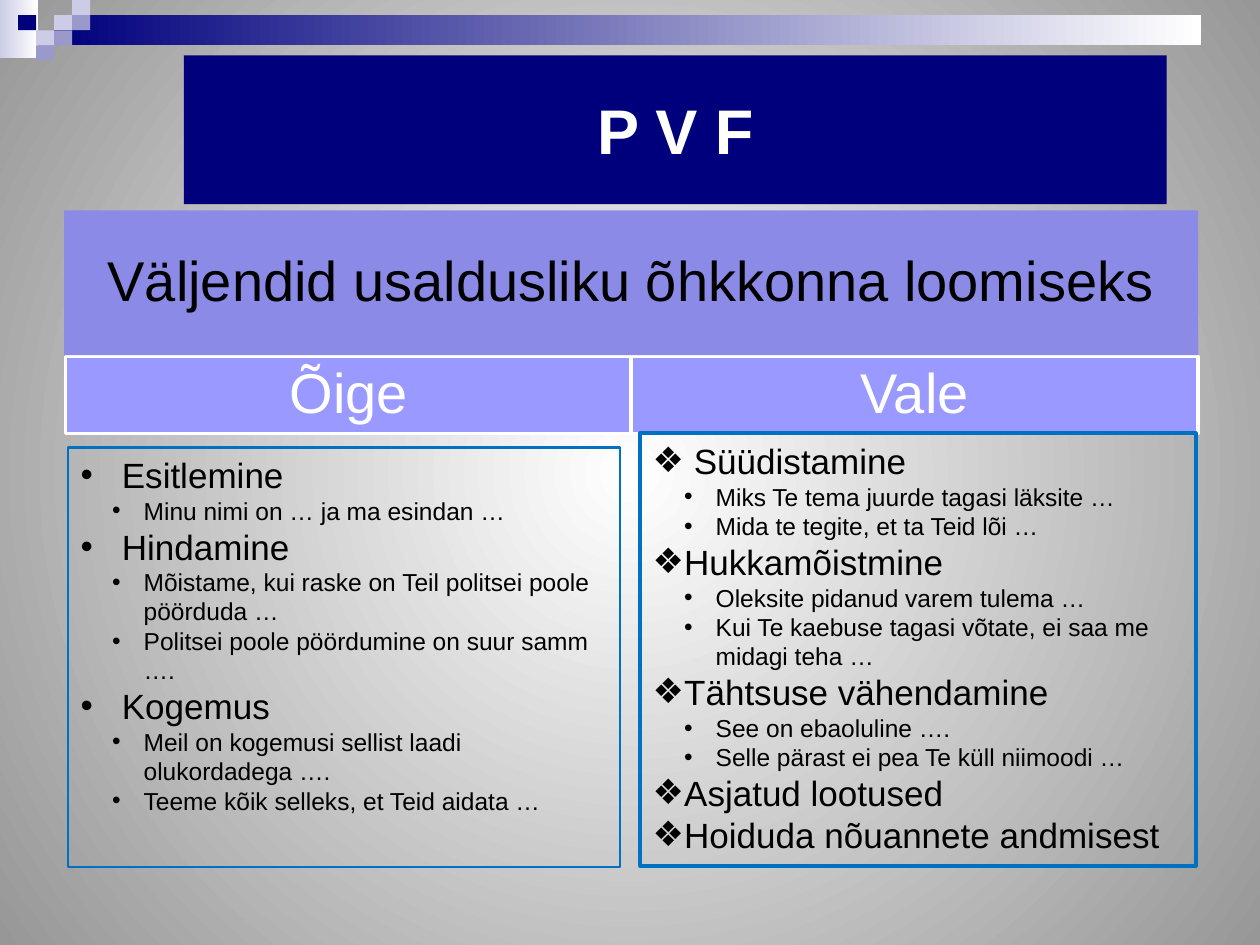
"""Build the PVF slide comparing right and wrong expressions."""
from lxml.etree import SubElement
from pptx import Presentation
from pptx.dml.color import RGBColor
from pptx.enum.shapes import MSO_SHAPE
from pptx.enum.text import MSO_ANCHOR as ANCHOR, MSO_AUTO_SIZE as FIT, PP_ALIGN as ALIGN
from pptx.oxml.ns import qn
from pptx.util import Inches, Pt

NAVY = RGBColor(0x00, 0x00, 0x7D)
PALE = RGBColor(0xCC, 0xCC, 0xE6)
LILAC = RGBColor(0x99, 0x99, 0xCC)
BAND = RGBColor(0x8B, 0x8B, 0xE7)
HEAD = RGBColor(0x99, 0x99, 0xFF)
EDGE = RGBColor(0x00, 0x70, 0xC0)
GREY = RGBColor(0x97, 0x97, 0x97)
WHITE = RGBColor(0xFF, 0xFF, 0xFF)
BLACK = RGBColor(0x00, 0x00, 0x00)

TITLE = "P V F"
TOPIC = "Väljendid usaldusliku õhkkonna loomiseks"
HEADS = ["Õige", "Vale"]
RIGHT = [
    (" Esitlemine", ["Minu nimi on … ja ma esindan …"]),
    (" Hindamine", ["Mõistame, kui raske on Teil politsei poole pöörduda …",
                    "Politsei poole pöördumine on suur samm …."]),
    (" Kogemus", ["Meil on kogemusi sellist laadi olukordadega ….",
                  "Teeme kõik selleks, et Teid aidata …"]),
]
WRONG = [
    (" Süüdistamine", ["Miks Te tema juurde tagasi läksite …",
                       "Mida te tegite, et ta Teid lõi …"]),
    ("Hukkamõistmine", ["Oleksite pidanud varem tulema …",
                        "Kui Te kaebuse tagasi võtate, ei saa me midagi teha …"]),
    ("Tähtsuse vähendamine", ["See on ebaoluline ….",
                              "Selle pärast ei pea Te küll niimoodi …"]),
    ("Asjatud lootused", []),
    ("Hoiduda nõuannete andmisest", []),
]
LISTS = [
    (RIGHT, "•", (0.54, 3.55, 4.38, 3.33), 1.5),
    (WRONG, "❖", (5.08, 3.44, 4.41, 3.43), 2.25),
]
BARS = [((0, 0, 0.3, 0.46), PALE, WHITE), ((0.43, 0.12, 9.1, 0.24), NAVY, WHITE)]
TILES = [(3, 1, PALE), (4, 0, PALE), (4, 1, LILAC), (2, 2, PALE),
         (1, 1, NAVY), (3, 2, LILAC), (2, 3, LILAC)]
TILE_W, TILE_H = 0.43 / 3, 0.12


def apply(item, **values):
    for name, value in values.items():
        setattr(item, name, value)


def place(shape, box):
    names = ("left", "top", "width", "height")
    apply(shape, **dict(zip(names, map(Inches, box))))


def paint(fill, color):
    fill.solid()
    fill.fore_color.rgb = color


def blend(fill, start, end):
    fill.gradient()
    for stop, color, spot in zip(fill.gradient_stops, (start, end), (0, 1)):
        stop.color.rgb = color
        stop.position = spot


def style(font, size, color, bold=False):
    apply(font, name="Arial", size=Pt(size), bold=bold)
    font.color.rgb = color


def add_box(slide, box, color):
    shape = slide.shapes.add_shape(MSO_SHAPE.RECTANGLE, *map(Inches, box))
    shape.shadow.inherit = False
    paint(shape.fill, color)
    shape.line.fill.background()
    return shape


def add_label(slide, box, fill, text, color):
    shape = add_box(slide, box, fill)
    frame = shape.text_frame
    edge = Inches(0.13)
    apply(frame, word_wrap=True, vertical_anchor=ANCHOR.MIDDLE, margin_left=edge,
          margin_top=edge, margin_right=edge, margin_bottom=edge)
    para = frame.paragraphs[0]
    apply(para, text=text, alignment=ALIGN.CENTER, line_spacing=0.9)
    style(para.font, 32, color)
    return shape


def fill_list(holder, groups, mark):
    frame = holder.text_frame
    apply(frame, word_wrap=True, auto_size=FIT.NONE, vertical_anchor=ANCHOR.TOP)
    rows = []
    for head, items in groups:
        rows.append((head, 0, mark, 20))
        rows += [(item, 1, "•", 14) for item in items]
    for i, (text, level, sign, size) in enumerate(rows):
        para = frame.add_paragraph() if i else frame.paragraphs[0]
        apply(para, text=text, level=level, space_before=Pt(0), alignment=ALIGN.LEFT)
        props = para._p.get_or_add_pPr()
        props.set("marL", str(Inches(0.25 * (level + 1))))
        props.set("indent", str(Inches(-0.25)))
        SubElement(props, qn("a:buFont")).set("typeface", "Arial")
        SubElement(props, qn("a:buChar")).set("char", sign)
        style(para.font, size, BLACK)


def set_back(slide):
    fill = slide.background.fill
    blend(fill, WHITE, GREY)
    grad = slide._element.find(".//" + qn("a:gradFill"))
    grad.remove(grad.find(qn("a:lin")))
    ring = SubElement(grad, qn("a:path"))
    ring.set("path", "circle")
    rect = SubElement(ring, qn("a:fillToRect"))
    for side in "ltrb":
        rect.set(side, "50000")


def main():
    deck = Presentation()
    apply(deck, slide_width=Inches(10), slide_height=Inches(7.5))
    slide = deck.slides.add_slide(deck.slide_layouts[3])
    title, *bodies = slide.placeholders
    set_back(slide)

    for box, start, end in BARS:
        bar = add_box(slide, box, start)
        blend(bar.fill, start, end)
        bar.fill.gradient_angle = 0
    for col, row, color in TILES:
        add_box(slide, (col * TILE_W, row * TILE_H, TILE_W, TILE_H), color)

    place(title, (1.46, 0.44, 7.8, 1.18))
    paint(title.fill, NAVY)
    title.text_frame.vertical_anchor = ANCHOR.MIDDLE
    para = title.text_frame.paragraphs[0]
    apply(para, text=TITLE, alignment=ALIGN.CENTER)
    style(para.font, 36, WHITE, True)

    add_label(slide, (0.51, 1.67, 9, 1.16), BAND, TOPIC, BLACK)
    for i, text in enumerate(HEADS):
        head = add_label(slide, (0.52 + 4.49 * i, 2.83, 4.5, 0.61), HEAD, text, WHITE)
        head.line.color.rgb = WHITE
        head.line.width = Pt(2)
    add_box(slide, (0.51, 2.65, 9, 0.17), BAND)

    for body, (groups, mark, box, width) in zip(bodies, LISTS):
        place(body, box)
        body.line.color.rgb = EDGE
        body.line.width = Pt(width)
        fill_list(body, groups, mark)
        slide.shapes._spTree.append(body._element)

    deck.save("out.pptx")


if __name__ == "__main__":
    main()
